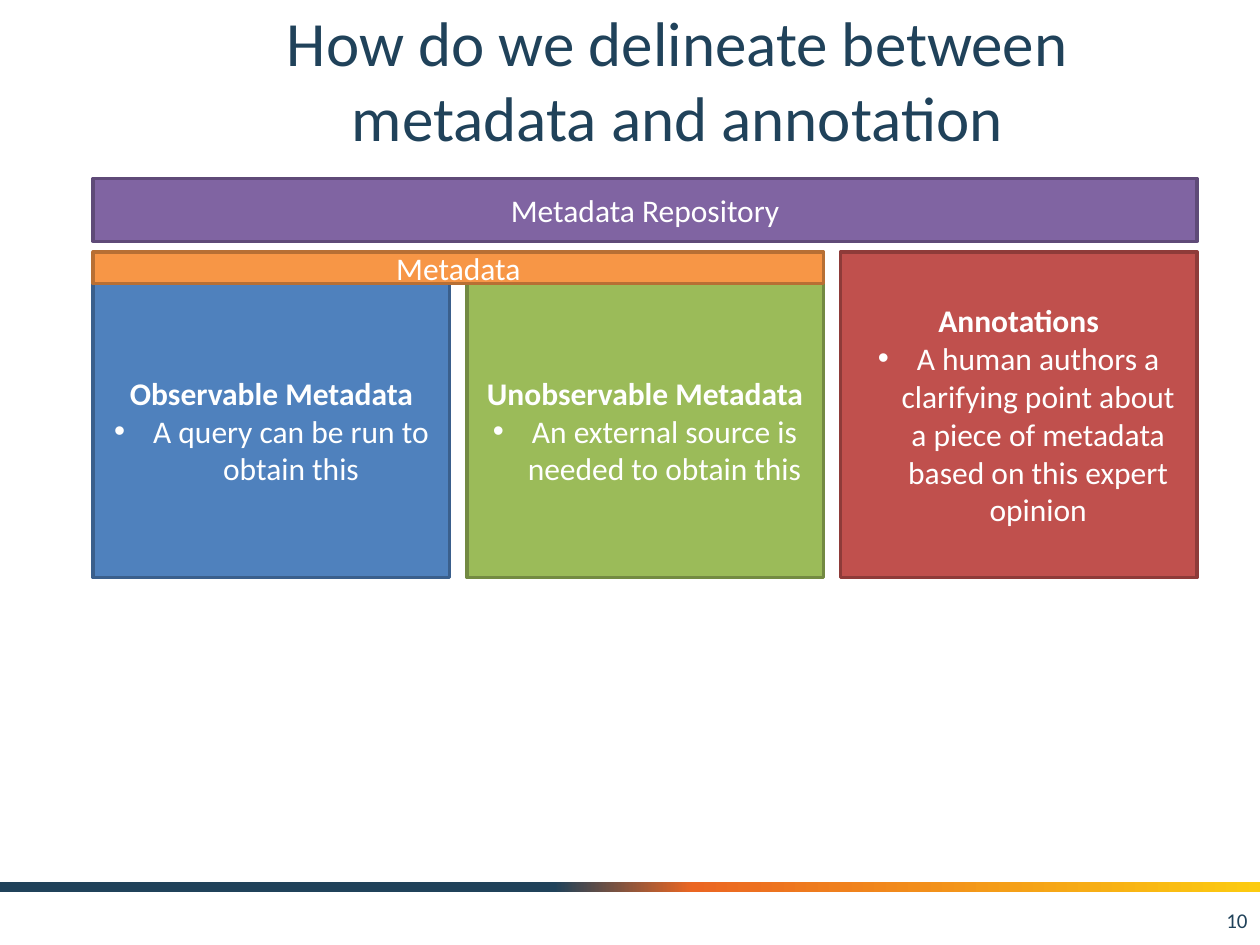
"""Slide that sets metadata apart from annotation inside one repository."""
from copy import deepcopy
from dataclasses import dataclass

from lxml.etree import SubElement
from pptx import Presentation
from pptx.dml.color import RGBColor as Rgb
from pptx.enum.shapes import MSO_SHAPE as Shape
from pptx.enum.text import MSO_ANCHOR as Anchor, PP_ALIGN as Align
from pptx.oxml.ns import qn
from pptx.util import Inches, Pt


@dataclass(frozen=True)
class Theme:
    font: str = "Calibri"
    navy: str = "20425A"
    white: str = "FFFFFF"
    purple: tuple = ("8064A2", "5F4A78")
    blue: tuple = ("4F81BD", "3A5F8C")
    green: tuple = ("9BBB59", "738A42")
    red: tuple = ("C0504D", "8E3B39")
    orange: tuple = ("F79646", "B76F34")
    ribbon: tuple = ((0.44, "20425A"), (0.55, "EB6622"), (1, "FCCB10"))
    title_size: int = 36
    body_size: int = 18
    page_size: int = 12
    border: int = 2


class Deck:
    CELL = 1 / 12
    LEFT, PITCH, WIDTH = 8.88, 35.58, 33.96

    def __init__(self, theme):
        self.theme = theme
        self.show = Presentation()
        self.show.slide_width, self.show.slide_height = Inches(10), Inches(7.5)
        self.slide = self.show.slides.add_slide(self.show.slide_layouts[6])

    def cells(self, *counts):
        return [Inches(count * self.CELL) for count in counts]

    def rect(self, *area):
        block = self.slide.shapes.add_shape(Shape.RECTANGLE, *self.cells(*area))
        block.shadow.inherit = False
        return block

    def add_line(self, frame, text, size, color, align=Align.CENTER, bold=False, bullet=False):
        paragraph = frame.paragraphs[0]
        if paragraph.runs:
            paragraph = frame.add_paragraph()
        if bullet:
            props = paragraph._p.get_or_add_pPr()
            for name, value in {"marL": Inches(0.31), "indent": -Inches(0.31)}.items():
                props.set(name, str(value))
            SubElement(props, qn("a:buFont"), typeface="Arial")
            SubElement(props, qn("a:buChar"), char="•")
        paragraph.alignment = align
        run = paragraph.add_run()
        run.text = text
        style = {"name": self.theme.font, "size": Pt(size), "bold": bold}
        for name, value in style.items():
            setattr(run.font, name, value)
        run.font.color.rgb = Rgb.from_string(color)

    def frame(self, block):
        frame = block.text_frame
        for name, value in {"word_wrap": True, "vertical_anchor": Anchor.MIDDLE}.items():
            setattr(frame, name, value)
        return frame

    def label(self, area, text, size, align):
        frame = self.frame(self.slide.shapes.add_textbox(*self.cells(*area)))
        self.add_line(frame, text, size, self.theme.navy, align)

    def panel(self, column, span, top, bottom, colors, heading, point=None):
        left = self.LEFT + column * self.PITCH
        width = (span - 1) * self.PITCH + self.WIDTH
        block = self.rect(left, top, width, bottom - top)
        fill, edge = colors
        block.fill.solid()
        block.fill.fore_color.rgb = Rgb.from_string(fill)
        block.line.color.rgb = Rgb.from_string(edge)
        block.line.width = Pt(self.theme.border)
        frame = self.frame(block)
        size, white = self.theme.body_size, self.theme.white
        self.add_line(frame, heading, size, white, bold=point is not None)
        if point:
            self.add_line(frame, point, size, white, bullet=True)

    def ribbon(self, top, height):
        band = self.rect(0, top, 120, height)
        band.line.fill.background()
        band.fill.gradient()
        band.fill.gradient_angle = 0
        first = next(band.element.iter(qn("a:gs")))
        first.addnext(deepcopy(first))
        for stop, (position, color) in zip(band.fill.gradient_stops, self.theme.ribbon):
            stop.position = position
            stop.color.rgb = Rgb.from_string(color)


def main():
    theme = Theme()
    deck = Deck(theme)
    deck.ribbon(84, 1)
    deck.label((15, 2, 99, 11), "How do we delineate between metadata and annotation",
               theme.title_size, Align.CENTER)
    deck.label((92, 85.2, 28, 4.8), "10", theme.page_size, Align.RIGHT)
    panels = [
        (0, 3, 17, 23, theme.purple, "Metadata Repository"),
        (0, 1, 27, 55, theme.blue, "Observable Metadata",
         "A query can be run to obtain this"),
        (1, 1, 27, 55, theme.green, "Unobservable Metadata",
         "An external source is needed to obtain this"),
        (2, 1, 24, 55, theme.red, "Annotations",
         "A human authors a clarifying point about a piece of metadata "
         "based on this expert opinion"),
        (0, 2, 24, 27, theme.orange, "Metadata"),
    ]
    for panel in panels:
        deck.panel(*panel)
    deck.show.save("out.pptx")


if __name__ == "__main__":
    main()
